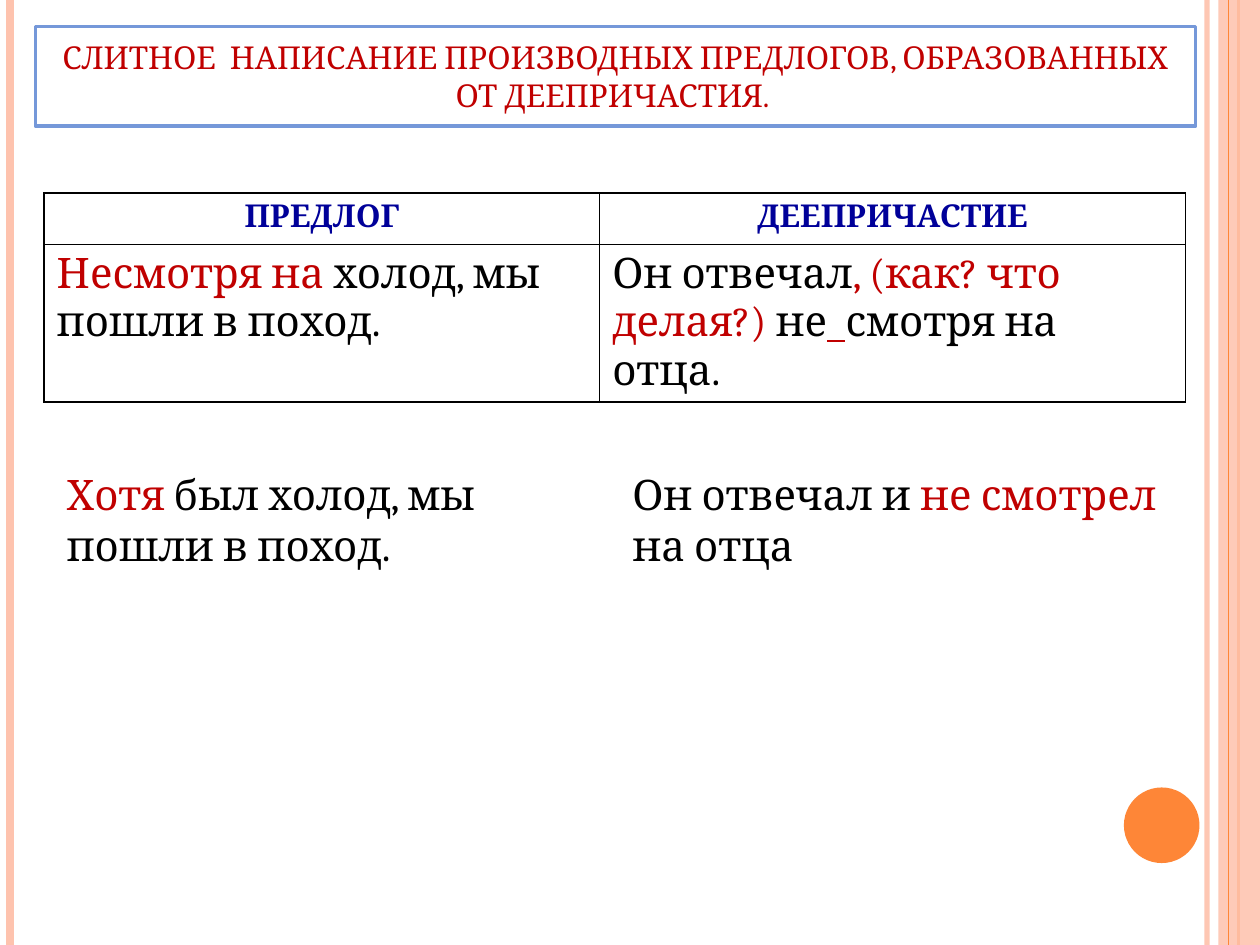
from lxml.etree import SubElement
from pptx import Presentation
from pptx.dml.color import RGBColor
from pptx.enum.shapes import MSO_CONNECTOR, MSO_SHAPE
from pptx.enum.text import MSO_ANCHOR, MSO_AUTO_SIZE, PP_ALIGN
from pptx.oxml.ns import qn
from pptx.util import Inches, Pt

# Content: each text is a list of (words, colour, underlined) runs
INK = {"red": "C00000", "navy": "000099", "black": "000000", "white": "FFFFFF",
       "blue": "7598D9", "peach": "FEC3AE", "orange": "FE8637"}
FONT = "Cambria"
TITLE = [("СЛИТНОЕ  НАПИСАНИЕ ПРОИЗВОДНЫХ ПРЕДЛОГОВ, ОБРАЗОВАННЫХ "
          "ОТ ДЕЕПРИЧАСТИЯ. ", "red", False)]
HEADS = ["ПРЕДЛОГ", "ДЕЕПРИЧАСТИЕ"]
CASES = [
    [("Несмотря на", "red", False),
     (" холод, мы пошли в поход.", "black", False)],
    [("Он отвечал", "black", False), (", (как? что делая?) ", "red", False),
     ("не", "black", False), ("  ", "red", True),
     ("смотря на отца.", "black", False)],
]
NOTES = [
    [("Хотя", "red", False), (" был холод, мы пошли в поход.", "black", False)],
    [("Он отвечал и ", "black", False), ("не смотрел ", "red", False),
     ("на отца", "black", False)],
]
# Side stripes: x, colour, weight, opacity in percent
LINES = [(9.58, "peach", 3, 93), (0.08, "peach", 4.5, 100),
         (9.83, "orange", 1.5, 100), (9.75, "orange", 0.75, 100)]

# Grid
WIDE, HIGH = 10, 7.5
BAND = 0.33
COLS, ROWS = [4.41, 4.65], [0.41, 0.9]
LEFT, TOP = 0.35, 1.53
NOTE_X, NOTE_Y, NOTE_H, GAP = 0.43, 3.67, 0.91, 0.08


def color(name):
    return RGBColor.from_string(INK[name])


def fade(node, share):
    tint = next(node.iter(qn("a:srgbClr")))
    SubElement(tint, qn("a:alpha"), val=str(share * 1000))


def write(frame, runs, size, align=PP_ALIGN.LEFT, bold=False):
    para = frame.paragraphs[0]
    para.alignment = align
    for words, ink, under in runs:
        run = para.add_run()
        run.text = words
        font = run.font
        font.name, font.size, font.bold = FONT, Pt(size), bold
        font.underline = under
        font.color.rgb = color(ink)


def shape(kind, box, fill, edge=None, weight=2):
    item = slide.shapes.add_shape(kind, *map(Inches, box))
    item.shadow.inherit = False
    item.fill.solid()
    item.fill.fore_color.rgb = color(fill)
    if edge:
        item.line.color.rgb = color(edge)
        item.line.width = Pt(weight)
    else:
        item.line.fill.background()
    return item


def stripe(x, ink, weight, share):
    line = slide.shapes.add_connector(
        MSO_CONNECTOR.STRAIGHT, Inches(x), 0, Inches(x), Inches(HIGH))
    line.line.color.rgb = color(ink)
    line.line.width = Pt(weight)
    props = line.element.spPr
    SubElement(props, qn("a:effectLst"))
    if share < 100:
        fade(props, share)


def border(cell):
    props = cell._tc.get_or_add_tcPr()
    for spot, side in enumerate(("lnL", "lnR", "lnT", "lnB")):
        edge = SubElement(props, qn("a:" + side), w=str(Pt(1)))
        fill = SubElement(edge, qn("a:solidFill"))
        SubElement(fill, qn("a:srgbClr"), val=INK["black"])
        props.remove(edge)
        props.insert(spot, edge)


deck = Presentation()
deck.slide_width, deck.slide_height = Inches(WIDE), Inches(HIGH)
slide = deck.slides.add_slide(deck.slide_layouts[6])

# Frame of stripes, band and disc
for row in LINES[:3]:
    stripe(*row)
band = shape(MSO_SHAPE.RECTANGLE, (WIDE - BAND, 0, BAND, HIGH), "peach")
fade(band.element.spPr, 87)
stripe(*LINES[3])
shape(MSO_SHAPE.OVAL, (8.92, 6.25, 0.6, 0.6), "orange")

# Title
head = shape(MSO_SHAPE.RECTANGLE, (0.28, 0.21, 9.21, 0.79), "white", "blue")
head.text_frame.word_wrap = True
head.text_frame.vertical_anchor = MSO_ANCHOR.MIDDLE
write(head.text_frame, TITLE, 18, PP_ALIGN.CENTER)

# Table
table = slide.shapes.add_table(
    2, 2, *map(Inches, (LEFT, TOP, sum(COLS), sum(ROWS)))).table
for row, high in zip(table.rows, ROWS):
    row.height = Inches(high)
for c, wide in enumerate(COLS):
    table.columns[c].width = Inches(wide)
    top, low = table.cell(0, c), table.cell(1, c)
    for cell in (top, low):
        cell.fill.background()
        border(cell)
    write(top.text_frame, [(HEADS[c], "navy", False)], 18,
          PP_ALIGN.CENTER, True)
    write(low.text_frame, CASES[c], 24)

# Rephrased examples below the table
for c, runs in enumerate(NOTES):
    x = NOTE_X + c * (COLS[0] + GAP)
    note = slide.shapes.add_textbox(
        *map(Inches, (x, NOTE_Y, COLS[0], NOTE_H))).text_frame
    note.word_wrap = True
    note.auto_size = MSO_AUTO_SIZE.SHAPE_TO_FIT_TEXT
    write(note, runs, 24)

deck.save("out.pptx")
